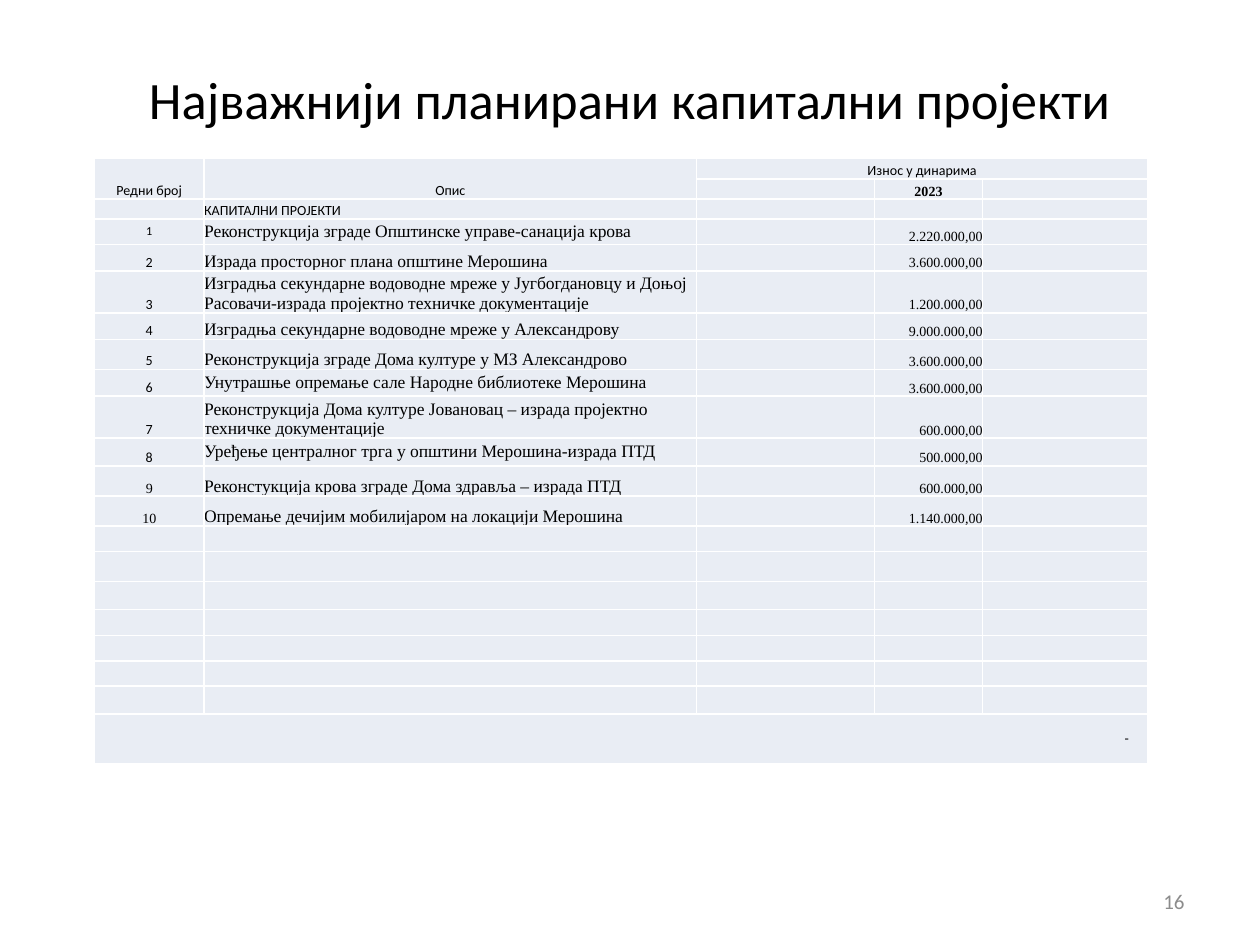
from lxml import etree
from pptx import Presentation
from pptx import util as u
from pptx.dml import color
from pptx.enum import text
from pptx.oxml import ns

HUES = {"ink": "000000", "gray": "8C8C8C", "pale": "E9EDF4", "line": "FFFFFF"}
SANS, SERIF = "Calibri", "Times New Roman"
LEFT, MID, RIGHT = text.PP_ALIGN.LEFT, text.PP_ALIGN.CENTER, text.PP_ALIGN.RIGHT
LOW, HALF = text.MSO_ANCHOR.BOTTOM, text.MSO_ANCHOR.MIDDLE

COLS = [0.87, 3.91, 1.41, 0.86, 1.31]
ROWS = [0.16, 0.16, 0.16, 0.2, 0.21, 0.3, 0.21, 0.24, 0.21, 0.31, 0.22,
        0.24, 0.24, 0.2, 0.24, 0.22, 0.21, 0.2, 0.2, 0.22, 0.4]
FIRST = 3
WORKS = [
    ("Реконструкција зграде Општинске управе-санација крова", "2.220.000,00"),
    ("Израда просторног плана општине Мерошина", "3.600.000,00"),
    ("Изградња секундарне водоводне мреже у Југбогдановцу и Доњој "
     "Расовачи-израда пројектно техничке документације", "1.200.000,00"),
    ("Изградња секундарне водоводне мреже у Александрову", "9.000.000,00"),
    ("Реконструкција зграде Дома културе у МЗ Александрово", "3.600.000,00"),
    ("Унутрашње опремање сале Народне библиотеке Мерошина", "3.600.000,00"),
    ("Реконструкција Дома културе Јовановац – израда пројектно "
     "техничке документације", "600.000,00"),
    ("Уређење централног трга у општини Мерошина-израда ПТД", "500.000,00"),
    ("Реконстукција крова зграде Дома здравља – израда ПТД", "600.000,00"),
    ("Опремање дечијим мобилијаром на локацији Мерошина", "1.140.000,00"),
]
CENTERED = {1, 6, 8}


def write(frame, words, size=8, font=SANS, hue="ink", align=LEFT, bold=False):
    """Put formatted words in a text frame."""
    frame.word_wrap = True
    par = frame.paragraphs[0]
    par.alignment = align
    par.font.size = u.Pt(size)
    run = par.add_run()
    run.text = words
    run.font.size = u.Pt(size)
    run.font.name = font
    run.font.bold = bold
    run.font.color.rgb = color.RGBColor.from_string(HUES[hue])


def label(slide, box, words, **form):
    """Add a text box centred on its height."""
    frame = slide.shapes.add_textbox(*map(u.Inches, box)).text_frame
    frame.vertical_anchor = HALF
    write(frame, words, **form)


def edge(cell):
    """Draw thin light borders around a cell."""
    props = cell._tc.get_or_add_tcPr()
    for spot, side in enumerate(("a:lnL", "a:lnR", "a:lnT", "a:lnB")):
        line = etree.Element(ns.qn(side), w=str(u.Pt(1)))
        fill = etree.SubElement(line, ns.qn("a:solidFill"))
        etree.SubElement(fill, ns.qn("a:srgbClr"), val=HUES["line"])
        props.insert(spot, line)


def style(cell):
    """Give a cell its fill, borders and tight margins."""
    cell.margin_left = cell.margin_right = 0
    cell.margin_top = cell.margin_bottom = 0
    cell.vertical_anchor = LOW
    cell.fill.solid()
    cell.fill.fore_color.rgb = color.RGBColor.from_string(HUES["pale"])
    cell.text_frame.paragraphs[0].font.size = u.Pt(8)
    edge(cell)


def grid(slide):
    """Add the empty styled table."""
    box = map(u.Inches, (0.75, 1.26, sum(COLS), sum(ROWS)))
    table = slide.shapes.add_table(len(ROWS), len(COLS), *box).table
    for col, width in zip(table.columns, COLS):
        col.width = u.Inches(width)
    for row, height in zip(table.rows, ROWS):
        row.height = u.Inches(height)
    for cell in table.iter_cells():
        style(cell)
    return table


def head(table):
    """Fill the heading rows."""
    for col in (0, 1):
        table.cell(0, col).merge(table.cell(1, col))
    table.cell(0, 2).merge(table.cell(0, 4))
    for col, words in enumerate(("Редни број", "Опис", "Износ у динарима")):
        write(table.cell(0, col).text_frame, words, align=MID)
    write(table.cell(1, 3).text_frame, "2023", font=SERIF, align=MID, bold=True)
    write(table.cell(2, 1).text_frame, "КАПИТАЛНИ ПРОЈЕКТИ")


def body(table):
    """Fill one row for each project."""
    for num, (name, cost) in enumerate(WORKS, 1):
        order, title, _, sum_, _ = table.rows[FIRST + num - 1].cells
        if num == 1:
            order.vertical_anchor = HALF
        if num in CENTERED:
            title.vertical_anchor = HALF
        write(order.text_frame, str(num), size=7 if num == 1 else 8,
              font=SANS if num < 9 else SERIF, align=MID)
        write(title.text_frame, name, size=10, font=SERIF)
        write(sum_.text_frame, cost, font=SERIF, align=RIGHT)


def foot(table):
    """Fill the merged last row."""
    last = len(ROWS) - 1
    cell = table.cell(last, 0)
    cell.merge(table.cell(last, len(COLS) - 1))
    cell.vertical_anchor = HALF
    cell.margin_right = u.Inches(0.15)
    write(cell.text_frame, "-", align=RIGHT)


def main():
    """Build and save the slide."""
    deck = Presentation()
    deck.slide_width, deck.slide_height = u.Inches(10), u.Inches(7.5)
    slide = deck.slides.add_slide(deck.slide_layouts[6])
    label(slide, (7.17, 6.95, 2.33, 0.4), "16", size=12, hue="gray", align=RIGHT)
    label(slide, (0.5, 0.3, 9, 0.96), "Најважнији планирани капитални пројекти",
          size=30, align=MID)
    table = grid(slide)
    head(table)
    body(table)
    foot(table)
    deck.save("out.pptx")


if __name__ == "__main__":
    main()
